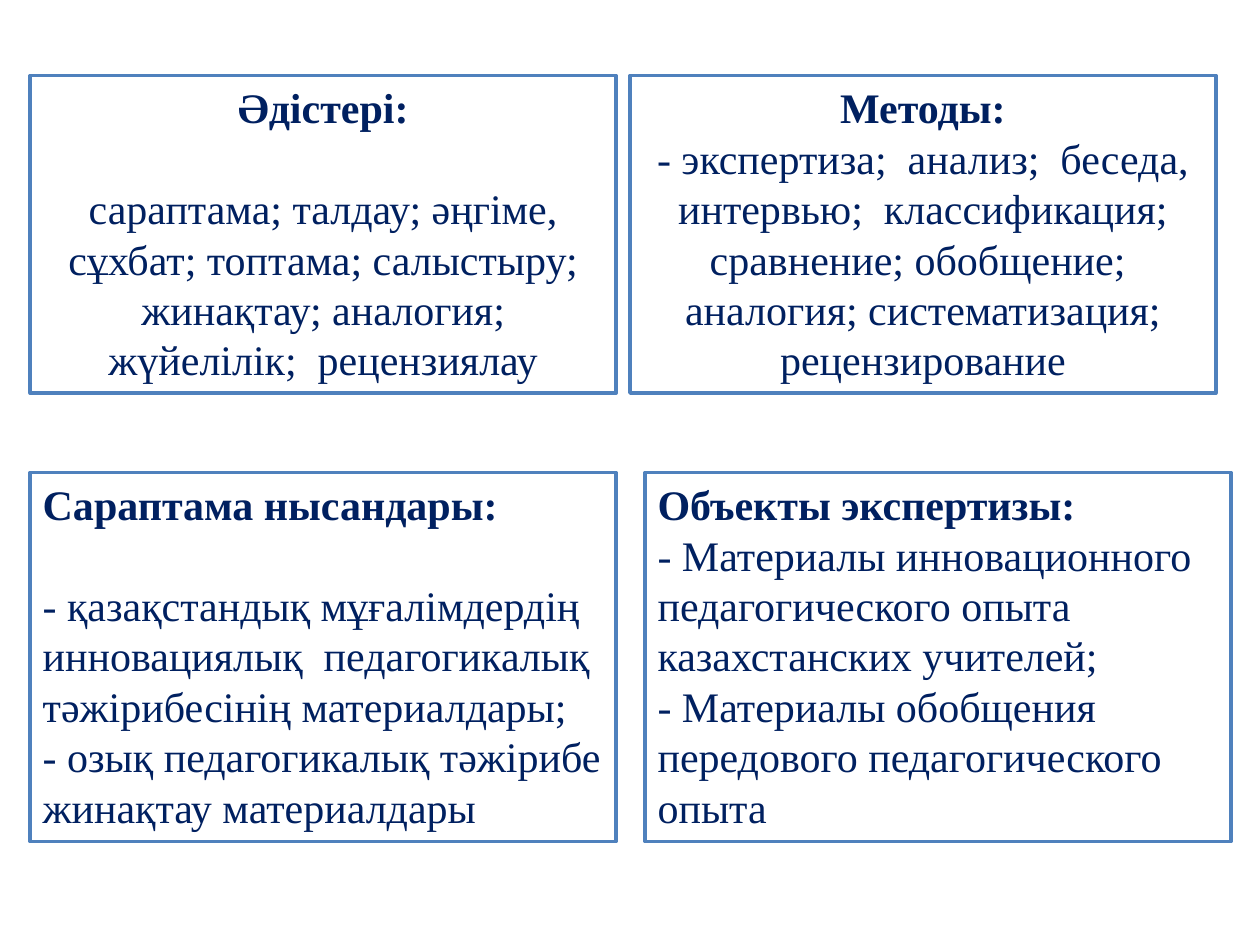
from dataclasses import dataclass

from pptx import Presentation
from pptx.dml.color import RGBColor
from pptx.enum.shapes import MSO_SHAPE as Shape
from pptx.enum.text import MSO_ANCHOR as Anchor, MSO_AUTO_SIZE as AutoSize, PP_ALIGN as Align
from pptx.slide import Slide
from pptx.util import Inches, Pt

COLORS = {"paper": "FFFFFF", "border": "4F81BD", "text": "002060"}
FONT = {"name": "Times New Roman", "size": Pt(24)}
FRAME = {
    "word_wrap": True,
    "auto_size": AutoSize.SHAPE_TO_FIT_TEXT,
    "vertical_anchor": Anchor.TOP,
}
BOX_WIDTH = 4.65
LEFT_COLUMN = 0.24
METHODS_ROW = {"top": 0.6, "height": 2.52, "align": Align.CENTER}
OBJECTS_ROW = {"top": 3.75, "height": 2.93, "align": Align.LEFT}
LINE_GAP = Pt(28.8)  # one line of text


@dataclass
class Panel:
    left: float
    top: float
    height: float
    align: Align
    heading: str
    lines: list[str]
    gap: Pt = Pt(0)


PANELS = [
    Panel(LEFT_COLUMN, **METHODS_ROW, heading="Әдістері:", gap=LINE_GAP, lines=[
        "сараптама; талдау; әңгіме, сұхбат; топтама; салыстыру;",
        "жинақтау; аналогия;",
        "жүйелілік;  рецензиялау",
    ]),
    Panel(5, **METHODS_ROW, heading="Методы:", lines=[
        "- экспертиза;  анализ;  беседа, интервью;  классификация; "
        "сравнение; обобщение;  аналогия; систематизация;",
        "рецензирование",
    ]),
    Panel(LEFT_COLUMN, **OBJECTS_ROW, heading="Сараптама нысандары:", gap=LINE_GAP, lines=[
        "- қазақстандық мұғалімдердің  инновациялық  педагогикалық "
        "тәжірибесінің материалдары;",
        "- озық педагогикалық тәжірибе жинақтау материалдары",
    ]),
    Panel(5.12, **OBJECTS_ROW, heading="Объекты экспертизы:", lines=[
        "- Материалы инновационного педагогического опыта казахстанских учителей;",
        "- Материалы обобщения передового педагогического опыта",
    ]),
]


def color(name: str) -> RGBColor:
    return RGBColor.from_string(COLORS[name])


def set_all(target: object, values: dict) -> None:
    for name, value in values.items():
        setattr(target, name, value)


def draw_panel(page: Slide, panel: Panel) -> None:
    box = page.shapes.add_shape(
        Shape.RECTANGLE, Inches(panel.left), Inches(panel.top),
        Inches(BOX_WIDTH), Inches(panel.height))
    box.shadow.inherit = False
    box.fill.solid()
    box.fill.fore_color.rgb = color("paper")
    box.line.color.rgb = color("border")
    box.line.width = Pt(2)

    # Bold heading, then the plain lines
    frame = box.text_frame
    set_all(frame, FRAME)
    for index, text in enumerate([panel.heading, *panel.lines]):
        is_heading = index == 0
        para = frame.paragraphs[0] if is_heading else frame.add_paragraph()
        para.alignment = panel.align
        if is_heading:
            para.space_after = panel.gap
        span = para.add_run()
        span.text = text
        set_all(span.font, {**FONT, "bold": is_heading})
        span.font.color.rgb = color("text")


def main() -> None:
    deck = Presentation()
    deck.slide_width, deck.slide_height = Inches(10), Inches(7.5)
    page = deck.slides.add_slide(deck.slide_layouts[6])  # blank layout
    for panel in PANELS:
        draw_panel(page, panel)
    deck.save("out.pptx")


if __name__ == "__main__":
    main()
